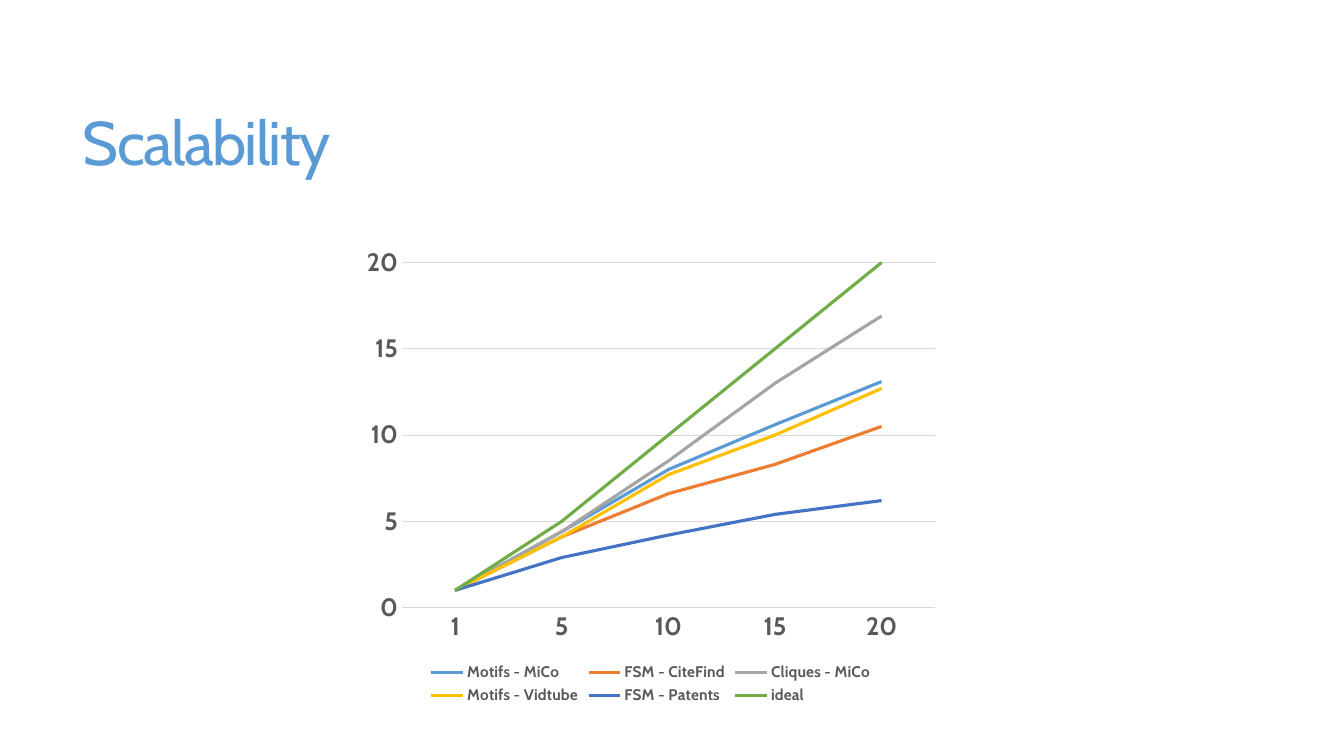
from dataclasses import dataclass

from pptx import Presentation
from pptx.chart.data import CategoryChartData
from pptx.dml.color import RGBColor
from pptx.enum.chart import XL_CHART_TYPE as ChartType
from pptx.enum.chart import XL_LEGEND_POSITION as LegendPosition
from pptx.enum.chart import XL_TICK_MARK as TickMark
from pptx.enum.text import MSO_ANCHOR as Anchor
from pptx.enum.text import PP_ALIGN as Align
from pptx.util import Inches, Pt


@dataclass(frozen=True)
class Theme:
    font: str = "Cabin"
    title_color: str = "5B9BD5"
    label_color: str = "595959"
    grid_color: str = "D9D9D9"
    title_size: float = 44
    title_spacing: int = -120
    axis_size: float = 18
    legend_size: float = 11
    chart_size: float = 10
    grid_width: float = 0.75
    series_width: float = 2.25


@dataclass(frozen=True)
class Speedup:
    name: str
    color: str
    values: tuple[float, ...]


THEME = Theme()
WORKERS = ("1", "5", "10", "15", "20")
SPEEDUPS = (
    Speedup("Motifs - MiCo", "5B9BD5", (1, 4.4, 8, 10.6, 13.1)),
    Speedup("FSM - CiteFind", "ED7D31", (1, 4.1, 6.6, 8.3, 10.5)),
    Speedup("Cliques - MiCo", "A5A5A5", (1, 4.4, 8.5, 13, 16.9)),
    Speedup("Motifs - Vidtube", "FFC000", (1, 4.1, 7.7, 10, 12.7)),
    Speedup("FSM - Patents", "4472C4", (1, 2.9, 4.2, 5.4, 6.2)),
    Speedup("ideal", "70AD47", (1, 5, 10, 15, 20)),
)


def set_all(target, values: dict) -> None:
    for name, value in values.items():
        setattr(target, name, value)


def style_font(font, size: float, color: str, bold: bool = False) -> None:
    set_all(font, {"name": THEME.font, "size": Pt(size), "bold": bold})
    font.color.rgb = RGBColor.from_string(color)


def style_line(line, width: float, color: str) -> None:
    line.width = Pt(width)
    line.color.rgb = RGBColor.from_string(color)


def write_title(page, text: str) -> None:
    title = page.shapes.title
    set_all(title, {"left": Inches(0.72), "top": Inches(0.55),
                    "width": Inches(11.78), "height": Inches(1.81)})
    title.text_frame.vertical_anchor = Anchor.MIDDLE
    para = title.text_frame.paragraphs[0]
    set_all(para, {"alignment": Align.LEFT, "line_spacing": 0.85})
    span = para.add_run()
    span.text = text
    style_font(span.font, THEME.title_size, THEME.title_color)
    span.font._element.set("spc", str(THEME.title_spacing))


def style_axes(chart) -> None:
    for axis in (chart.category_axis, chart.value_axis):
        set_all(axis, {"major_tick_mark": TickMark.NONE,
                       "minor_tick_mark": TickMark.NONE})
        style_font(axis.tick_labels.font, THEME.axis_size, THEME.label_color, True)
    style_line(chart.category_axis.format.line, THEME.grid_width, THEME.grid_color)

    value_axis = chart.value_axis
    set_all(value_axis, {"minimum_scale": 0, "maximum_scale": 20, "major_unit": 5,
                         "has_major_gridlines": True})
    value_axis.format.line.fill.background()
    style_line(value_axis.major_gridlines.format.line,
               THEME.grid_width, THEME.grid_color)


def add_speedup_chart(page) -> None:
    chart_data = CategoryChartData()
    chart_data.categories = WORKERS
    for speedup in SPEEDUPS:
        chart_data.add_series(speedup.name, speedup.values)
    chart = page.shapes.add_chart(
        ChartType.LINE, Inches(3.52), Inches(2.36), Inches(5.87), Inches(4.67),
        chart_data).chart

    style_font(chart.font, THEME.chart_size, "000000")
    set_all(chart, {"has_title": False, "has_legend": True})
    set_all(chart.legend, {"position": LegendPosition.BOTTOM,
                           "include_in_layout": False})
    style_font(chart.legend.font, THEME.legend_size, THEME.label_color, True)
    style_axes(chart)

    chart.plots[0].vary_by_categories = False
    for series, speedup in zip(chart.plots[0].series, SPEEDUPS):
        series.smooth = False
        style_line(series.format.line, THEME.series_width, speedup.color)


def main() -> None:
    deck = Presentation()
    set_all(deck, {"slide_width": Inches(13.33), "slide_height": Inches(7.5)})
    page = deck.slides.add_slide(deck.slide_layouts.get_by_name("Title Only"))
    write_title(page, "Scalability")
    add_speedup_chart(page)
    deck.save("out.pptx")


if __name__ == "__main__":
    main()
